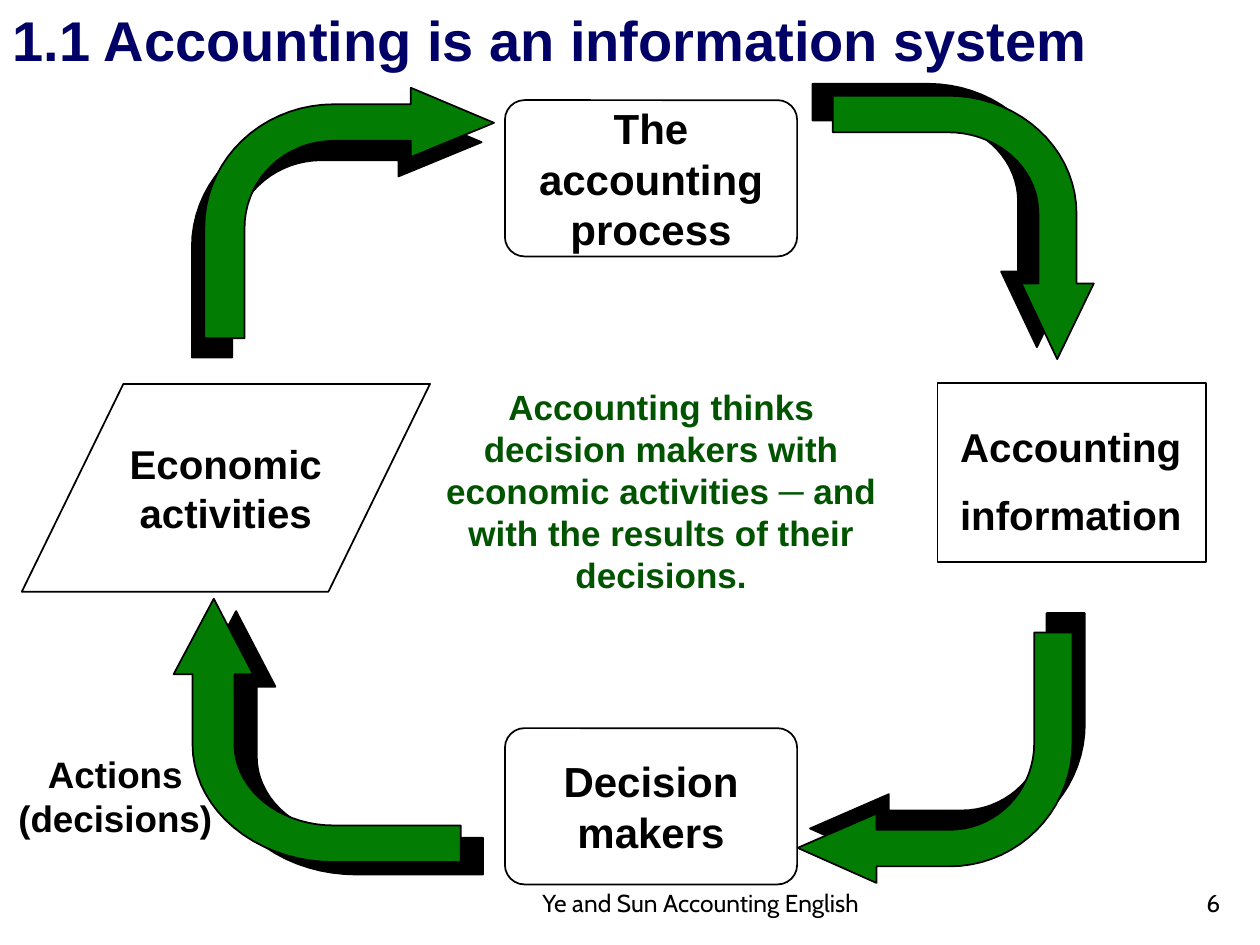
from math import cos, pi, sin

from pptx import Presentation
from pptx.dml.color import RGBColor
from pptx.enum.shapes import MSO_SHAPE
from pptx.enum.text import MSO_ANCHOR, MSO_AUTO_SIZE, PP_ALIGN
from pptx.util import Cm, Pt

BLACK, GREEN, DARK_GREEN, NAVY = "000000", "037C03", "005400", "000066"
ARC_STEPS = 18


def color(hex_string):
    return RGBColor.from_string(hex_string)


def place(shape, box):
    shape.left, shape.top, shape.width, shape.height = [Cm(length) for length in box]


def write(shape, lines, size, hex_string=BLACK, align=PP_ALIGN.CENTER,
          anchor=MSO_ANCHOR.MIDDLE, font="Arial", bold=True, gap=0):
    frame = shape.text_frame
    frame.word_wrap = True
    frame.auto_size = MSO_AUTO_SIZE.NONE
    frame.vertical_anchor = anchor
    frame.text = "\n".join(lines)
    for index, paragraph in enumerate(frame.paragraphs):
        paragraph.alignment = align
        paragraph.space_before = Pt(gap if index else 0)
        paragraph.font.name = font
        paragraph.font.size = Pt(size)
        paragraph.font.bold = bold
        paragraph.font.color.rgb = color(hex_string)
    return frame


def add_title(page, box, text):
    title = page.shapes.title
    place(title, box)
    write(title, [text], 32, NAVY, PP_ALIGN.LEFT, MSO_ANCHOR.BOTTOM)


def add_label(page, box, lines, size, **style):
    label = page.shapes.add_textbox(*[Cm(length) for length in box])
    return write(label, lines, size, **style)


def add_stage(page, box, kind, text="", size=24, adjustment=None):
    stage = page.shapes.add_shape(kind, *[Cm(length) for length in box])
    stage.shadow.inherit = False
    stage.fill.background()
    stage.line.color.rgb = color(BLACK)
    stage.line.width = Pt(1)
    if adjustment is not None:
        stage.adjustments[0] = adjustment
    if text:
        write(stage, [text], size)


def quarter_arc(center_x, center_y, radius_x, radius_y):
    angles = [pi / 2 * step / ARC_STEPS for step in range(ARC_STEPS + 1)]
    return [(center_x - radius_x * cos(angle), center_y - radius_y * sin(angle))
            for angle in angles]


def bent_arrow_outline(quarter_turns):
    center = (0.447, 0.558)
    outer = quarter_arc(*center, 0.447, 0.492)
    inner = quarter_arc(*center, 0.308, 0.346)
    head = [(0.713, 0.066), (0.713, 0), (1, 0.14), (0.713, 0.277), (0.713, 0.212)]
    points = [(0, 1), *outer, *head, *reversed(inner), (0.139, 1)]
    for _ in range(quarter_turns):
        points = [(1 - y, x) for x, y in points]
    return points


def add_arrow(page, box, quarter_turns, shadow_offset):
    left, top, width, height = box
    group = page.shapes.add_group_shape()
    for (shift_x, shift_y), fill in ((shadow_offset, BLACK), ((0, 0), GREEN)):
        points = [(Cm(left + shift_x + x * width), Cm(top + shift_y + y * height))
                  for x, y in bent_arrow_outline(quarter_turns)]
        builder = group.shapes.build_freeform(*points[0])
        builder.add_line_segments(points[1:], close=True)
        arrow = builder.convert_to_shape()
        arrow.shadow.inherit = False
        arrow.fill.solid()
        arrow.fill.fore_color.rgb = color(fill)
        arrow.line.color.rgb = color(BLACK)
        arrow.line.width = Pt(1)


def add_cycle(page):
    information = add_label(page, (19.05, 7.42, 5.08, 3.66), ["Accounting", "information"],
                            23, anchor=MSO_ANCHOR.TOP, gap=11.5)
    information.margin_top = Cm(1.09)
    rounded = MSO_SHAPE.ROUNDED_RECTANGLE
    add_stage(page, (10.18, 2.02, 5.89, 3.15), rounded, "The accounting process", 24, 0.125)
    add_stage(page, (10.18, 14.68, 5.89, 3.15), rounded, "Decision makers", 24, 0.125)
    add_stage(page, (0.44, 7.74, 8.23, 4.19), MSO_SHAPE.PARALLELOGRAM,
              "Economic activities", 23, 0.489)

    arrows = [
        ((4.12, 1.77, 5.84, 5.05), 0, (-0.25, 0.39)),
        ((3.5, 12.07, 5.79, 5.31), 3, (0.45, 0.25)),
        ((16.08, 12.75, 5.54, 5.05), 2, (0.25, -0.39)),
        ((16.79, 1.93, 5.26, 5.31), 1, (-0.41, -0.24)),
    ]
    for box, quarter_turns, shadow_offset in arrows:
        add_arrow(page, box, quarter_turns, shadow_offset)

    add_label(page, (0, 15.03, 4.65, 2.03), ["Actions (decisions)"], 21,
              anchor=MSO_ANCHOR.TOP)
    add_label(page, (8.53, 7.65, 9.6, 4.5),
              ["Accounting thinks decision makers with economic activities ─ and "
               "with the results of their decisions."],
              20, hex_string=DARK_GREEN, anchor=MSO_ANCHOR.TOP)
    add_stage(page, (18.9, 7.72, 5.41, 3.61), MSO_SHAPE.RECTANGLE)


def add_footer(page, top, height):
    style = {"font": "Cabin", "bold": False, "anchor": MSO_ANCHOR.BOTTOM}
    add_label(page, (10.1, top, 8.05, height), ["Ye and Sun Accounting English"], 14, **style)
    add_label(page, (19.57, top, 5.28, height), ["6"], 14, align=PP_ALIGN.RIGHT, **style)


def main():
    deck = Presentation()
    deck.slide_width, deck.slide_height = Cm(25.4), Cm(19.05)
    page = deck.slides.add_slide(deck.slide_layouts[5])
    add_cycle(page)
    add_title(page, (0, 0.6, 24.84, 0.99), "1.1 Accounting is an information system")
    add_footer(page, 17.35, 1.27)
    deck.save("out.pptx")


if __name__ == "__main__":
    main()
